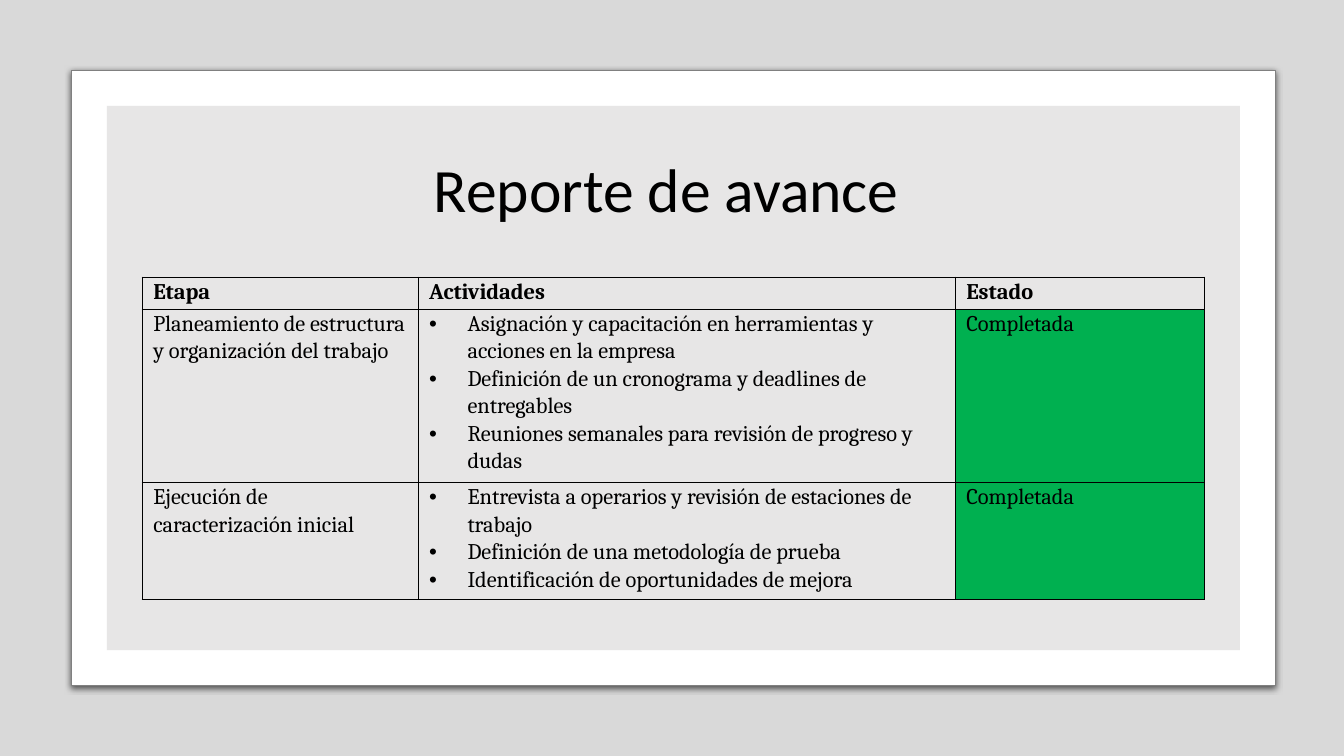
from dataclasses import dataclass

from lxml import etree
from pptx import Presentation
from pptx.dml.color import RGBColor
from pptx.enum.shapes import MSO_SHAPE as Preset
from pptx.enum.text import MSO_ANCHOR as Anchor, PP_ALIGN as Align
from pptx.oxml import parse_xml
from pptx.oxml.ns import nsdecls, qn
from pptx.util import Inches, Length, Pt

MODULE = 0.35  # inches in one grid column or row


@dataclass(frozen=True)
class Theme:
    backdrop: str = "000000"
    backdrop_alpha: int = 15
    card: str = "FFFFFF"
    card_line: str = "808080"
    panel: str = "E7E6E6"
    ink: str = "000000"
    done: str = "00B050"
    title_font: str = "Calibri"
    table_font: str = "Cambria"
    title_size: int = 44
    table_size: int = 16


@dataclass(frozen=True)
class Frame:
    """Position and size in grid modules."""
    left: float
    top: float
    width: float
    height: float

    def inset(self, modules: float) -> "Frame":
        return Frame(self.left + modules, self.top + modules,
                     self.width - 2 * modules, self.height - 2 * modules)

    def lengths(self) -> list[Length]:
        return [grid(n) for n in (self.left, self.top, self.width, self.height)]


@dataclass(frozen=True)
class Stage:
    name: str
    activities: tuple[str, ...]
    status: str


THEME = Theme()
SLIDE = Frame(0, 0, 38.09, 21.43)
CARD = Frame(2.03, 2, 34.11, 17.43)
PANEL = CARD.inset(1)
CONTENT = PANEL.inset(1)
TITLE = Frame(CONTENT.left, CONTENT.top, CONTENT.width, 2.91)
TABLE = Frame(CONTENT.left, 7.86, CONTENT.width, 9.13)
COLUMNS = (7.82, 15.22, 7.07)
ROWS = (0.91, 4.91, 3.31)

HEADINGS = ("Etapa", "Actividades", "Estado")
STAGES = (
    Stage("Planeamiento de estructura y organización del trabajo",
          ("Asignación y capacitación en herramientas y acciones en la empresa",
           "Definición de un cronograma y deadlines de entregables",
           "Reuniones semanales para revisión de progreso y dudas"),
          "Completada"),
    Stage("Ejecución de caracterización inicial",
          ("Entrevista a operarios y revisión de estaciones de trabajo",
           "Definición de una metodología de prueba",
           "Identificación de oportunidades de mejora"),
          "Completada"),
)


def grid(modules: float) -> Length:
    return Inches(modules * MODULE)


def color(code: str) -> RGBColor:
    return RGBColor.from_string(code)


def add_panel(page, frame: Frame, fill: str, preset=Preset.RECTANGLE):
    panel = page.shapes.add_shape(preset, *frame.lengths())
    panel.shadow.inherit = False
    panel.fill.solid()
    panel.fill.fore_color.rgb = color(fill)
    panel.line.fill.background()
    return panel


def add_backdrop(page) -> None:
    backdrop = add_panel(page, SLIDE, THEME.backdrop)
    tint = backdrop.element.spPr.find(".//" + qn("a:srgbClr"))
    etree.SubElement(tint, qn("a:alpha"), val=str(THEME.backdrop_alpha * 1000))


def add_card(page) -> None:
    card = add_panel(page, CARD, THEME.card, Preset.ROUNDED_RECTANGLE)
    card.adjustments[0] = 0
    card.line.color.rgb = color(THEME.card_line)
    card.line.width = Pt(0.75)
    effects = card.element.spPr.find(qn("a:effectLst"))
    effects.append(parse_xml(
        f'<a:outerShdw {nsdecls("a")} blurRad="{Pt(4.5)}" dist="{Pt(1.5)}" '
        f'dir="5400000" algn="t" rotWithShape="0"><a:srgbClr val="{THEME.ink}">'
        '<a:alpha val="63000"/></a:srgbClr></a:outerShdw>'))


def add_span(para, text: str, font: str, size: int, bold: bool = False) -> None:
    span = para.add_run()
    span.text = text
    span.font.name = font
    span.font.size = Pt(size)
    span.font.bold = bold
    span.font.color.rgb = color(THEME.ink)


def place_title(page) -> None:
    """Fill the title placeholder and bring it in front of the panels."""
    title = page.shapes.title
    title.left, title.top, title.width, title.height = TITLE.lengths()
    title.element.getparent().append(title.element)
    title.text_frame.vertical_anchor = Anchor.MIDDLE
    para = title.text_frame.paragraphs[0]
    para.alignment = Align.CENTER
    para.line_spacing = 0.9
    add_span(para, "Reporte de avance ", THEME.title_font, THEME.title_size)


def add_bullet(para) -> None:
    props = para._p.get_or_add_pPr()
    props.set("marL", str(Inches(0.38)))
    props.set("indent", str(Inches(-0.38)))
    etree.SubElement(props, qn("a:buFont"), typeface="Arial")
    etree.SubElement(props, qn("a:buChar"), char="•")


def add_borders(cell) -> None:
    props = cell._tc.get_or_add_tcPr()
    for position, side in enumerate("LRTB"):
        props.insert(position, parse_xml(
            f'<a:ln{side} {nsdecls("a")} w="{Pt(1)}"><a:solidFill>'
            f'<a:srgbClr val="{THEME.ink}"/></a:solidFill></a:ln{side}>'))


def fill_cell(cell, lines: tuple[str, ...], bold: bool = False,
              bulleted: bool = False, fill: str = "") -> None:
    cell.margin_left = cell.margin_right = Inches(0.11)
    cell.margin_top = cell.margin_bottom = 0
    cell.vertical_anchor = Anchor.TOP
    if fill:
        cell.fill.solid()
        cell.fill.fore_color.rgb = color(fill)
    else:
        cell.fill.background()
    add_borders(cell)
    frame = cell.text_frame
    for number, line in enumerate(lines):
        para = frame.add_paragraph() if number else frame.paragraphs[0]
        para.line_spacing = 1.07
        para.space_after = Pt(8 if number == len(lines) - 1 else 0)
        if bulleted:
            add_bullet(para)
        add_span(para, line, THEME.table_font, THEME.table_size, bold)


def add_progress_table(page) -> None:
    table = page.shapes.add_table(len(ROWS), len(COLUMNS), *TABLE.lengths()).table
    table.first_row = table.horz_banding = False
    for column, width in zip(table.columns, COLUMNS):
        column.width = grid(width)
    for row, height in zip(table.rows, ROWS):
        row.height = grid(height)
    for number, heading in enumerate(HEADINGS):
        fill_cell(table.cell(0, number), (heading,), bold=True)
    for number, stage in enumerate(STAGES, start=1):
        fill_cell(table.cell(number, 0), (stage.name,))
        fill_cell(table.cell(number, 1), stage.activities, bulleted=True)
        fill_cell(table.cell(number, 2), (stage.status,), fill=THEME.done)


def main() -> None:
    deck = Presentation()
    deck.slide_width, deck.slide_height = Inches(13.33), Inches(7.5)
    page = deck.slides.add_slide(deck.slide_layouts.get_by_name("Title Only"))
    add_backdrop(page)
    add_card(page)
    add_panel(page, PANEL, THEME.panel)
    place_title(page)
    add_progress_table(page)
    deck.save("out.pptx")


if __name__ == "__main__":
    main()
